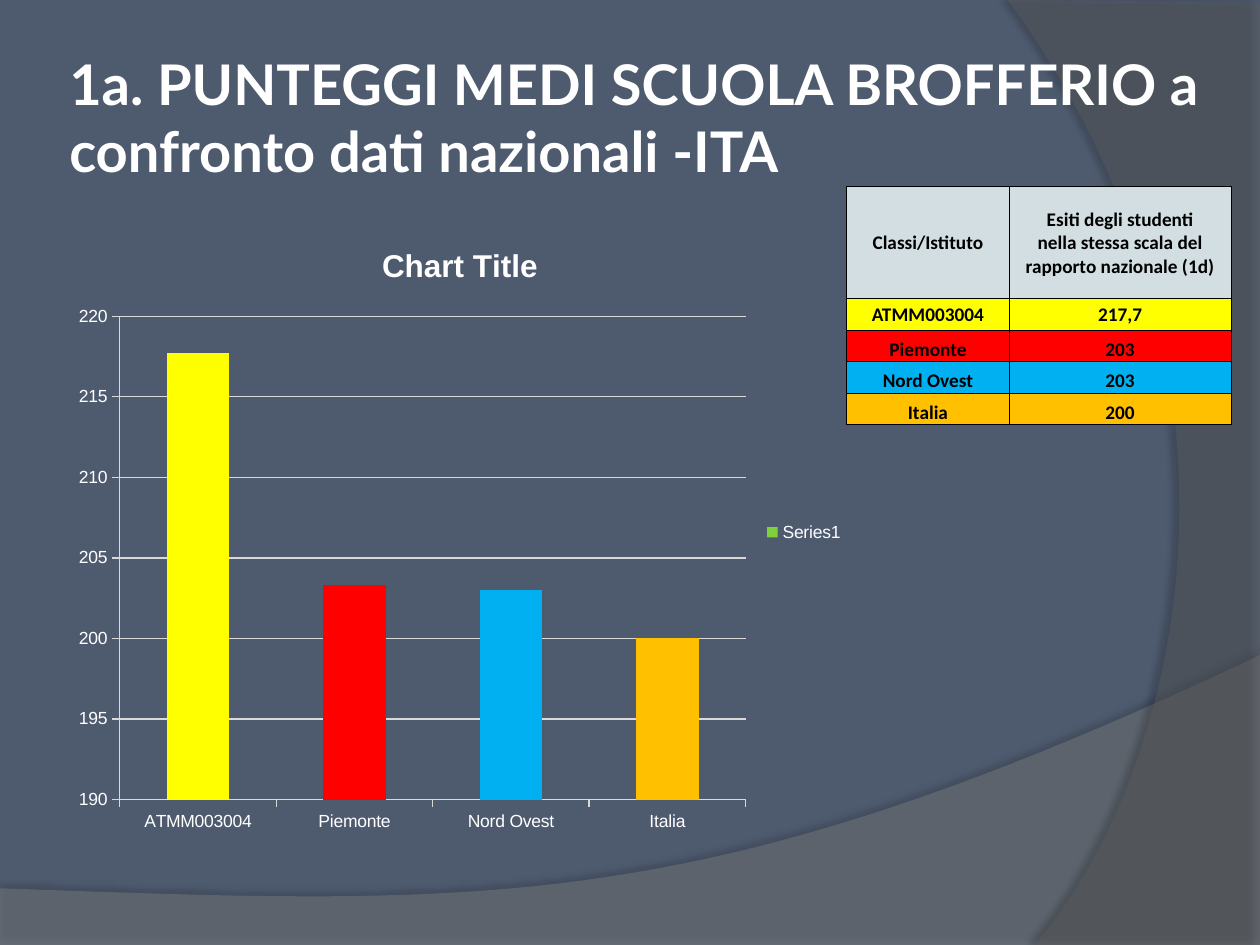
from copy import deepcopy
from dataclasses import dataclass

from lxml.etree import SubElement
from pptx import Presentation
from pptx.chart.data import CategoryChartData
from pptx.dml.color import RGBColor
from pptx.enum.chart import XL_CHART_TYPE, XL_LEGEND_POSITION, XL_TICK_MARK
from pptx.enum.text import MSO_ANCHOR, PP_ALIGN
from pptx.oxml.ns import qn
from pptx.util import Inches, Pt


@dataclass(frozen=True)
class Theme:
    background: str = "4E5B6F"
    wave: str = "7F7F7F"
    arc: str = "5E5E5E"
    light: str = "FFFFFF"
    dark: str = "000000"
    header: str = "D3DEE2"
    grid: str = "D9D9D9"
    series: str = "7FD13B"
    title_font: str = "Lato"
    table_font: str = "Calibri"
    chart_font: str = "Arial"
    title_size: int = 32
    chart_title_size: int = 18
    table_size: int = 11
    chart_size: int = 10


THEME = Theme()
HEADINGS = ("Classi/Istituto",
            "Esiti degli studenti\nnella stessa scala del\nrapporto nazionale (1d)")
# name, score in the table, score in the chart, colour
SCORES = [
    ("ATMM003004", "217,7", 217.7, "FFFF00"),
    ("Piemonte", "203", 203.3, "FF0000"),
    ("Nord Ovest", "203", 203, "00B0F0"),
    ("Italia", "200", 200, "FFC000"),
]


def rgb(value):
    return RGBColor.from_string(value)


def paint(fill, color):
    fill.solid()
    fill.fore_color.rgb = rgb(color)


def style_font(font, name, size, color, bold=False):
    font.name, font.size, font.bold = name, Pt(size), bold
    font.color.rgb = rgb(color)


def write_text(frame, text, *, font, size, color, bold=True,
               align=PP_ALIGN.LEFT):
    paragraph = frame.paragraphs[0]
    paragraph.text = text.replace("\n", "\v")
    paragraph.alignment = align
    for run in paragraph.runs:
        style_font(run.font, font, size, color, bold)
    for line_break in paragraph._p.findall(qn("a:br")):
        line_break.insert(0, deepcopy(paragraph.runs[0]._r.rPr))


def curve_points(start, control_1, control_2, end, steps=48):
    """Points along a cubic curve, without its start."""
    points = []
    for step in range(1, steps + 1):
        t = step / steps
        weights = ((1 - t) ** 3, 3 * t * (1 - t) ** 2, 3 * t * t * (1 - t), t ** 3)
        points.append(tuple(
            sum(w * p[axis] for w, p in zip(weights, (start, control_1, control_2, end)))
            for axis in (0, 1)))
    return points


def add_band(slide, points, color, opacity, shadow_opacity, distance, direction):
    """A translucent background band with a soft shadow."""
    (start_x, start_y), *rest = [(Inches(x), Inches(y)) for x, y in points]
    builder = slide.shapes.build_freeform(start_x, start_y)
    builder.add_line_segments(rest, close=True)
    shape = builder.convert_to_shape()
    paint(shape.fill, color)
    shape.line.fill.background()
    shape.shadow.inherit = False
    properties = shape._element.spPr
    fill_color = properties.find(qn("a:solidFill")).find(qn("a:srgbClr"))
    SubElement(fill_color, qn("a:alpha"), val=str(opacity * 1000))
    shadow = SubElement(
        properties.find(qn("a:effectLst")), qn("a:outerShdw"), blurRad=str(Pt(4)),
        dist=str(Pt(distance)), dir=str(direction * 60000), rotWithShape="0")
    shadow_color = SubElement(shadow, qn("a:srgbClr"), val=THEME.dark)
    SubElement(shadow_color, qn("a:alpha"), val=str(shadow_opacity * 1000))


def add_background(slide, width, height):
    paint(slide.background.fill, THEME.background)
    wave = [(0, 7.05), (0, height), (width, height), (width, 5.2)]
    wave += curve_points((width, 5.2), (5.59, 7.29), (3.91, 7.19), (0, 7.05))
    add_band(slide, wave, THEME.wave, 45, 35, 3.5, 270)
    arc = [(width, 0.02), (width, height), (8.21, height)]
    arc += curve_points((8.21, height), (9.35, 6.19), (10.18, 3), (8, 0))
    add_band(slide, arc, THEME.arc, 40, 45, 4, 180)


def add_title(slide, left, top, width, height):
    frame = slide.shapes.add_textbox(left, top, width, height).text_frame
    frame.word_wrap = True
    frame.vertical_anchor = MSO_ANCHOR.MIDDLE
    frame.margin_left = frame.margin_right = Inches(0.05)
    frame.margin_top = frame.margin_bottom = Inches(0.05)
    write_text(frame, "1a. PUNTEGGI MEDI SCUOLA BROFFERIO a confronto dati nazionali -ITA",
               font=THEME.title_font, size=THEME.title_size, color=THEME.light)


def style_cell(cell, text, color, anchor):
    cell.margin_left = cell.margin_right = cell.margin_top = Inches(0.01)
    cell.margin_bottom = 0
    cell.vertical_anchor = anchor
    write_text(cell.text_frame, text, font=THEME.table_font, size=THEME.table_size,
               color=THEME.dark, align=PP_ALIGN.CENTER)
    properties = cell._tc.get_or_add_tcPr()
    for side in ("a:lnL", "a:lnR", "a:lnT", "a:lnB"):
        border = SubElement(properties, qn(side), w=str(Pt(0.5)))
        SubElement(SubElement(border, qn("a:solidFill")), qn("a:srgbClr"), val=THEME.dark)
    paint(cell.fill, color)


def add_score_table(slide, left, top, width, height):
    rows = [(*HEADINGS, THEME.header)]
    rows += [(name, score, color) for name, score, _, color in SCORES]
    table = slide.shapes.add_table(len(rows), 2, left, top, width, height).table
    table.columns[0].width = Inches(1.29)
    table.columns[1].width = width - Inches(1.29)
    row_height = Inches(0.25)
    for index, (*texts, color) in enumerate(rows):
        table.rows[index].height = row_height if index else height - row_height * len(SCORES)
        anchor = MSO_ANCHOR.MIDDLE if index < 2 else MSO_ANCHOR.BOTTOM
        for column, text in enumerate(texts):
            style_cell(table.cell(index, column), text, color, anchor)


def add_score_chart(slide, left, top, width, height):
    data = CategoryChartData(number_format="General")
    data.categories = [name for name, *_ in SCORES]
    data.add_series("Series1", [value for _, _, value, _ in SCORES])
    chart = slide.shapes.add_chart(
        XL_CHART_TYPE.COLUMN_CLUSTERED, left, top, width, height, data).chart
    style_font(chart.font, THEME.chart_font, THEME.chart_size, THEME.light)
    chart.has_title = True
    write_text(chart.chart_title.text_frame, "Chart Title", font=THEME.chart_font,
               size=THEME.chart_title_size, color=THEME.light, align=PP_ALIGN.CENTER)
    chart.has_legend = True
    chart.legend.position = XL_LEGEND_POSITION.RIGHT
    chart.legend.include_in_layout = False

    plot = chart.plots[0]
    plot.gap_width = 150
    plot.vary_by_categories = False
    series = plot.series[0]
    paint(series.format.fill, THEME.series)
    for index, (*_, color) in enumerate(SCORES):
        paint(series.points[index].format.fill, color)

    value_axis = chart.value_axis
    value_axis.minimum_scale, value_axis.maximum_scale = 190, 220
    value_axis.major_unit = 5
    value_axis.has_major_gridlines = True
    value_axis.tick_labels.number_format = "0"
    value_axis.tick_labels.number_format_is_linked = False
    for axis in (value_axis, chart.category_axis):
        axis.major_tick_mark = XL_TICK_MARK.OUTSIDE
    for ruled in (value_axis, chart.category_axis, value_axis.major_gridlines):
        ruled.format.line.width = Pt(0.75)
        ruled.format.line.color.rgb = rgb(THEME.grid)


def main():
    presentation = Presentation()
    presentation.slide_width, presentation.slide_height = Inches(10), Inches(7.5)
    slide = presentation.slides.add_slide(presentation.slide_layouts[6])
    add_background(slide, 10, 7.5)
    add_title(slide, Inches(0.5), Inches(0.3), Inches(9.34), Inches(1.25))
    add_score_table(slide, Inches(6.72), Inches(1.48), Inches(3.05), Inches(1.89))
    add_score_chart(slide, Inches(0.5), Inches(1.75), Inches(6.3), Inches(4.95))
    presentation.save("out.pptx")


if __name__ == "__main__":
    main()
